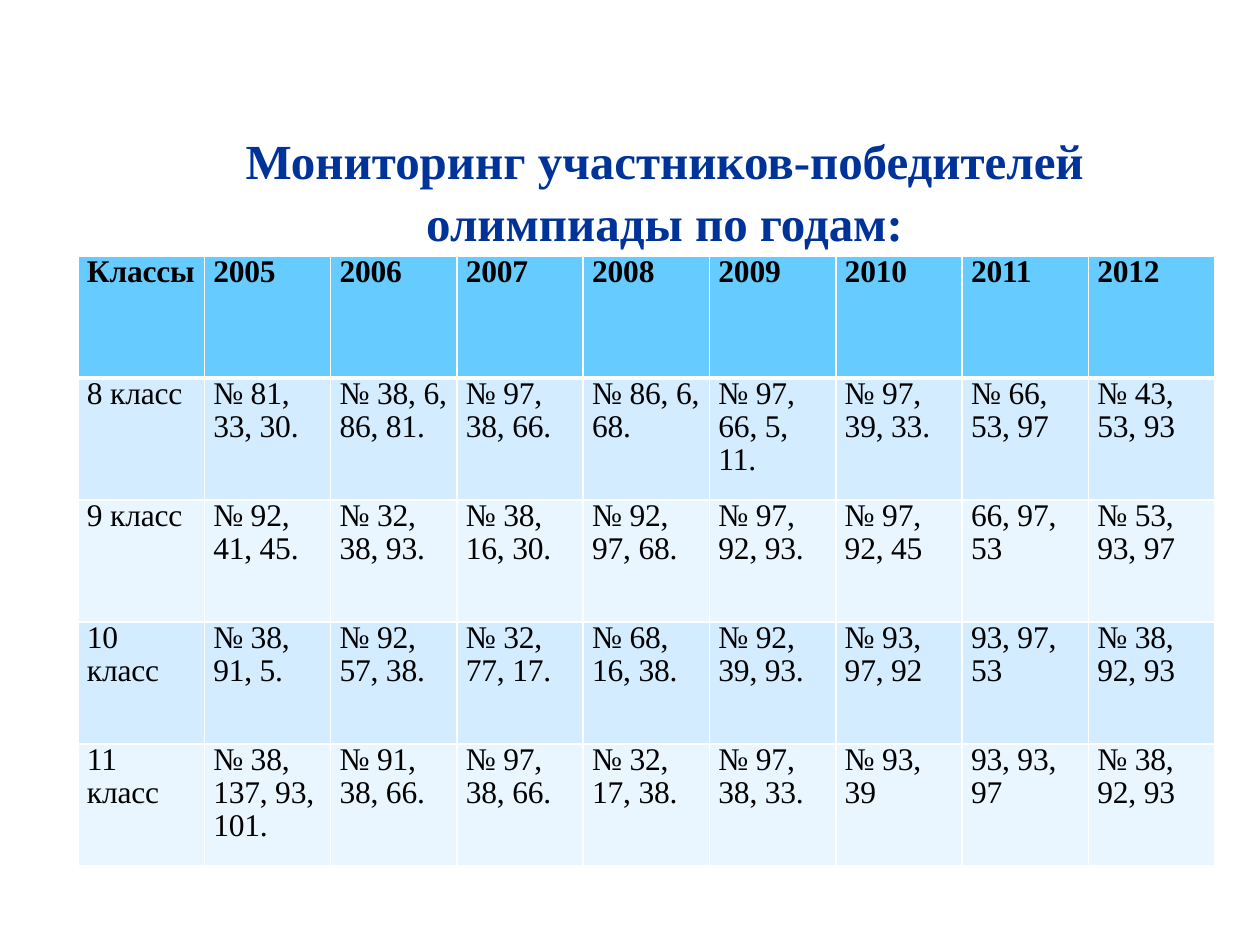
"""Build a slide that lists the olympiad winners by class and year."""
import dataclasses
import typing

import lxml.etree
import pptx
import pptx.dml.color
import pptx.enum.text
import pptx.oxml.ns
import pptx.util

SCALE = 914400 / 126


@dataclasses.dataclass(frozen=True)
class Theme:
    font: str = "Times New Roman"
    title: str = "003399"
    text: str = "000000"
    head: str = "66CCFF"
    bands: tuple[str, str] = ("D3ECFF", "EAF6FF")
    rule: str = "FFFFFF"
    big: int = 28
    small: int = 18


@dataclasses.dataclass(frozen=True)
class Box:
    left: int
    top: int
    width: int
    height: int

    def sides(self) -> list[int]:
        return [px(side) for side in dataclasses.astuple(self)]


class Row(typing.NamedTuple):
    name: str
    cells: list[str]


THEME = Theme()
TITLE = Box(108, 118, 1113, 118)
GRID = Box(78, 256, 1137, 610)
ROWS = [
    Row("Классы", [str(year) for year in range(2005, 2013)]),
    Row("8 класс", ["№ 81, 33, 30.", "№ 38, 6, 86, 81.", "№ 97, 38, 66.", "№ 86, 6, 68.",
                    "№ 97, 66, 5, 11.", "№ 97, 39, 33.", "№ 66, 53, 97", "№ 43, 53, 93"]),
    Row("9 класс", ["№ 92, 41, 45.", "№ 32, 38, 93.", "№ 38, 16, 30.", "№ 92, 97, 68.",
                    "№ 97, 92, 93.", "№ 97, 92, 45", "66, 97, 53", "№ 53, 93, 97"]),
    Row("10 класс", ["№ 38, 91, 5.", "№ 92, 57, 38.", "№ 32, 77, 17.", "№ 68, 16, 38.",
                     "№ 92, 39, 93.", "№ 93, 97, 92", "93, 97, 53", "№ 38, 92, 93"]),
    Row("11 класс", ["№ 38, 137, 93, 101.", "№ 91, 38, 66.", "№ 97, 38, 66.", "№ 32, 17, 38.",
                     "№ 97, 38, 33.", "№ 93, 39", "93, 93, 97", "№ 38, 92, 93"]),
]


def px(count: float) -> int:
    return pptx.util.Emu(round(count * SCALE))


def write(frame, text: str, *, size: int, color: str, bold: bool = False,
          align=pptx.enum.text.PP_ALIGN.LEFT, lead: float = 1.0, track: int = 0) -> None:
    para = frame.paragraphs[0]
    para.alignment = align
    para.line_spacing = lead
    run = para.add_run()
    run.text = text
    run.font.name = THEME.font
    run.font.size = pptx.util.Pt(size)
    run.font.bold = bold
    run.font.color.rgb = pptx.dml.color.RGBColor.from_string(color)
    if track:
        run._r.get_or_add_rPr().set("spc", str(track))


def edge(cell, side: str, width: int) -> None:
    tag = pptx.oxml.ns.qn
    line = lxml.etree.SubElement(cell._tc.get_or_add_tcPr(), tag(f"a:ln{side}"),
                                 w=str(pptx.util.Pt(width)))
    fill = lxml.etree.SubElement(line, tag("a:solidFill"))
    lxml.etree.SubElement(fill, tag("a:srgbClr"), val=THEME.rule)


def draw_cell(cell, text: str, row: int) -> None:
    head = row == 0
    cell.margin_left = cell.margin_right = px(9)
    cell.margin_top = cell.margin_bottom = 0
    thick = {"T": 3 if row == 1 else 1, "B": 3 if head else 1}
    for side in "LRTB":
        edge(cell, side, thick.get(side, 1))
    cell.fill.solid()
    shade = THEME.head if head else THEME.bands[(row - 1) % 2]
    cell.fill.fore_color.rgb = pptx.dml.color.RGBColor.from_string(shade)
    write(cell.text_frame, text, size=THEME.small, color=THEME.text,
          bold=head, lead=0.95, track=-10)


def draw_grid(slide, box: Box, rows: list[Row]) -> None:
    count = len(rows[0].cells) + 1
    table = slide.shapes.add_table(len(rows), count, *box.sides()).table
    table.first_row = table.horz_banding = False
    for col in table.columns:
        col.width = px(box.width / count)
    for place, row in enumerate(rows):
        table.rows[place].height = px(box.height / len(rows))
        for col, text in enumerate([row.name, *row.cells]):
            draw_cell(table.cell(place, col), text, place)


def draw_title(slide, box: Box, text: str) -> None:
    frame = slide.shapes.add_textbox(*box.sides()).text_frame
    frame.word_wrap = True
    frame.margin_top = px(10)
    frame.margin_bottom = 0
    write(frame, text, size=THEME.big, color=THEME.title, bold=True,
          align=pptx.enum.text.PP_ALIGN.CENTER, lead=1.05)


def main() -> None:
    deck = pptx.Presentation()
    deck.slide_width, deck.slide_height = px(1260), px(945)
    slide = deck.slides.add_slide(deck.slide_layouts[6])
    draw_title(slide, TITLE, "Мониторинг участников-победителей олимпиады по годам:")
    draw_grid(slide, GRID, ROWS)
    deck.save("out.pptx")


if __name__ == "__main__":
    main()
